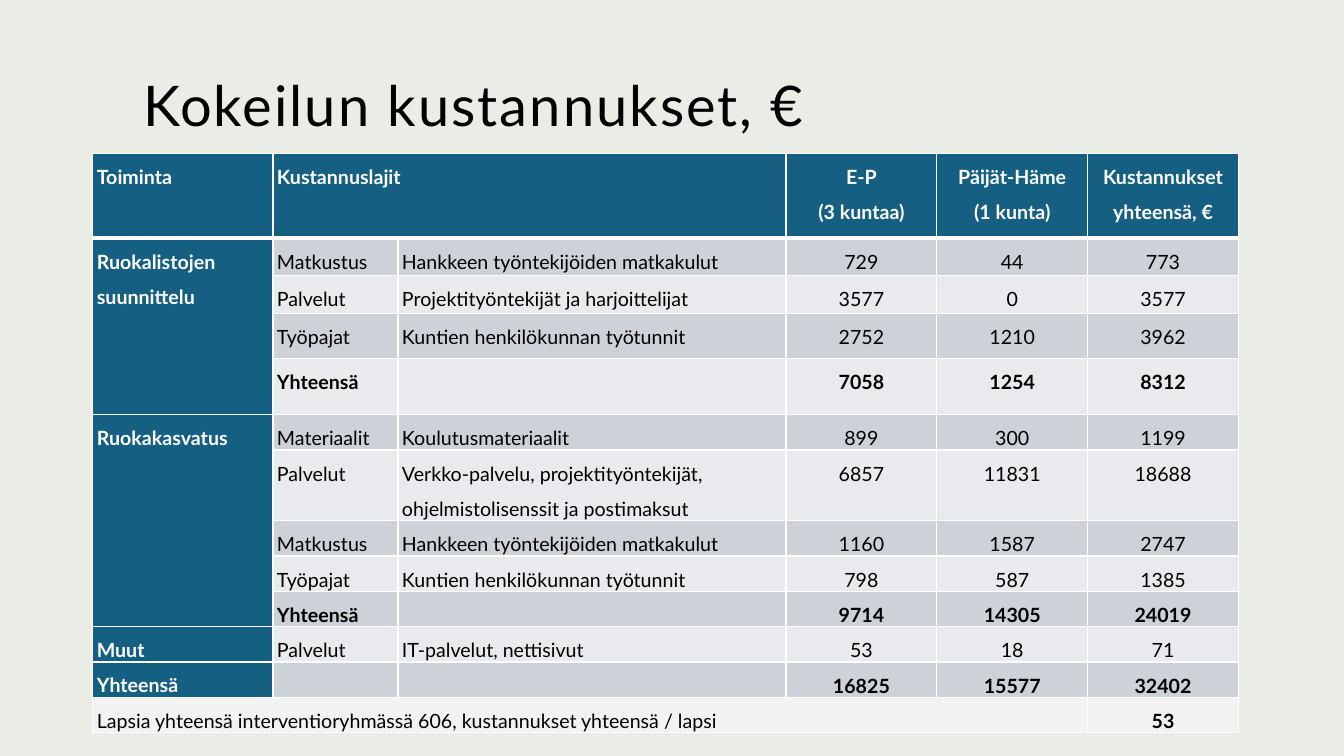
from dataclasses import dataclass
from lxml.etree import SubElement as Sub
from pptx import Presentation
from pptx.dml.color import RGBColor as Rgb
from pptx.enum.text import MSO_ANCHOR as Anchor, PP_ALIGN as Align
from pptx.oxml.ns import qn
from pptx.util import Cm, Pt

# Content
TITLE = "Kokeilun kustannukset, €"
SUM = "Yhteensä"
ROWS = [
    ("Toiminta", "Kustannuslajit", "", "E-P\n(3 kuntaa)",
     "Päijät-Häme\n(1 kunta)", "Kustannukset yhteensä, €"),
    ("Ruokalistojen suunnittelu", "Matkustus",
     "Hankkeen työntekijöiden matkakulut", "729", "44", "773"),
    ("", "Palvelut", "Projektityöntekijät ja harjoittelijat", "3577", "0", "3577"),
    ("", "Työpajat", "Kuntien henkilökunnan työtunnit", "2752", "1210", "3962"),
    ("", SUM, "", "7058", "1254", "8312"),
    ("Ruokakasvatus", "Materiaalit", "Koulutusmateriaalit", "899", "300", "1199"),
    ("", "Palvelut",
     "Verkko-palvelu, projektityöntekijät, ohjelmistolisenssit ja postimaksut",
     "6857", "11831", "18688"),
    ("", "Matkustus", "Hankkeen työntekijöiden matkakulut", "1160", "1587", "2747"),
    ("", "Työpajat", "Kuntien henkilökunnan työtunnit", "798", "587", "1385"),
    ("", SUM, "", "9714", "14305", "24019"),
    ("Muut", "Palvelut", "IT-palvelut, nettisivut", "53", "18", "71"),
    (SUM, "", "", "16825", "15577", "32402"),
    ("Lapsia yhteensä interventioryhmässä 606, kustannukset yhteensä / lapsi",
     "", "", "", "", "53"),
]
LAST = len(ROWS) - 1
SPANS = [((0, 1), (0, 2)), ((1, 0), (4, 0)), ((5, 0), (9, 0)), ((LAST, 0), (LAST, 4))]
WIDTHS = [4.54, 3.15, 9.78, 3.8, 3.8, 3.8]
LINE = 0.89
HEIGHTS = [2.14, 0.94, 0.95, 1.14, 1.42, LINE, 2 * LINE] + [LINE] * 6


@dataclass
class Theme:
    font: str = "Lato"
    back: str = "EAEDE5"
    head: str = "156082"
    odd: str = "CCD2D8"
    even: str = "E8EAED"
    foot: str = "F2F2F2"
    dark: str = "000000"
    light: str = "FFFFFF"
    big: int = 40
    body: int = 14


theme = Theme()


def style(para, size, color, bold=False):
    for run in para.runs:
        font = run.font
        font.name, font.size, font.bold = theme.font, Pt(size), bold
        font.color.rgb = Rgb.from_string(color)


def border(cell, row):
    """Draw white cell edges, with a heavy rule under the header."""
    props = cell._tc.get_or_add_tcPr()
    for side in "LRTB":
        heavy = (row, side) in [(0, "B"), (1, "T")]
        line = Sub(props, qn("a:ln" + side), w=str(Pt(3 if heavy else 1)))
        fill = Sub(line, qn("a:solidFill"))
        Sub(fill, qn("a:srgbClr"), val=theme.light)


def look(row, col):
    """Return the fill and text colour of a cell."""
    if row == LAST:
        return theme.foot, theme.dark
    if row == 0 or col == 0:
        return theme.head, theme.light
    return (theme.odd if row % 2 else theme.even), theme.dark


def is_bold(row, col):
    if row == LAST:
        return col > 0
    return row == 0 or col == 0 or SUM in ROWS[row]


def fill_cell(cell, row, col):
    border(cell, row)
    back, color = look(row, col)
    cell.fill.solid()
    cell.fill.fore_color.rgb = Rgb.from_string(back)
    cell.margin_left = cell.margin_right = Cm(0.1)
    cell.margin_top = cell.margin_bottom = 0
    if row >= LAST - 1 and col > 2:
        cell.vertical_anchor = Anchor.MIDDLE
    if not ROWS[row][col]:
        return
    cell.text_frame.text = ROWS[row][col]
    for para in cell.text_frame.paragraphs:
        para.line_spacing = 1.5
        para.alignment = Align.CENTER if col > 2 else Align.LEFT
        style(para, theme.body, color, is_bold(row, col))


# Slide
deck = Presentation()
deck.slide_width, deck.slide_height = Cm(33.87), Cm(19.05)
slide = deck.slides.add_slide(deck.slide_layouts[5])
slide.background.fill.solid()
slide.background.fill.fore_color.rgb = Rgb.from_string(theme.back)

# Title
title = slide.shapes.title
title.left, title.top, title.width, title.height = Cm(3.35), Cm(1.65), Cm(27.15), Cm(1.96)
title.text_frame.text = TITLE
title.text_frame.vertical_anchor = Anchor.BOTTOM
para = title.text_frame.paragraphs[0]
para.alignment, para.line_spacing = Align.LEFT, 0.9
style(para, theme.big, theme.dark)
para.runs[0]._r.get_or_add_rPr().set("spc", "150")

# Cost table
frame = slide.shapes.add_table(len(ROWS), len(WIDTHS), Cm(2.34), Cm(3.86),
                               Cm(sum(WIDTHS)), Cm(sum(HEIGHTS)))
table = frame.table
table.horz_banding = False
for col, width in zip(table.columns, WIDTHS):
    col.width = Cm(width)
for row, height in zip(table.rows, HEIGHTS):
    row.height = Cm(height)
for start, end in SPANS:
    table.cell(*start).merge(table.cell(*end))
for row in range(len(ROWS)):
    for col in range(len(WIDTHS)):
        fill_cell(table.cell(row, col), row, col)

deck.save("out.pptx")
